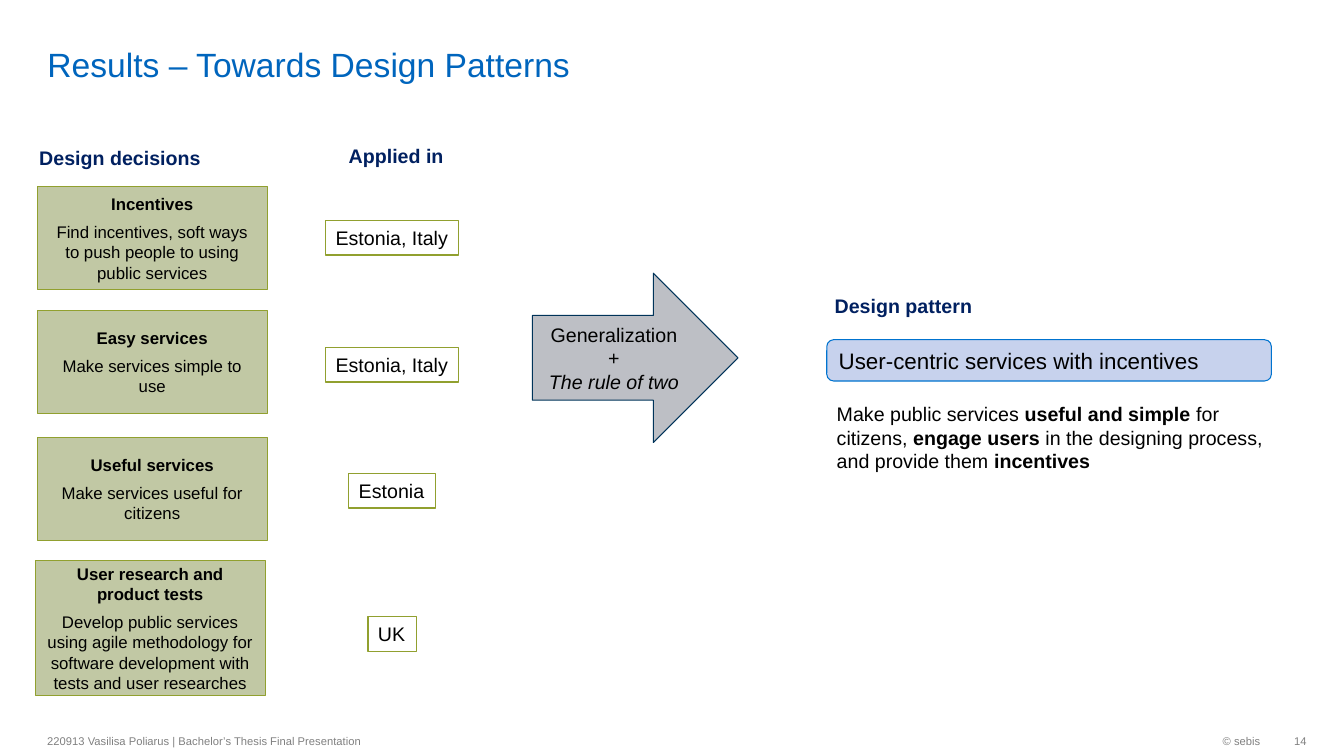
from dataclasses import dataclass

from lxml import etree
from pptx import Presentation
from pptx import util as u
from pptx.dml.color import RGBColor
from pptx.enum import shapes, text
from pptx.oxml.ns import qn

PX = 9144
ALIGN = text.PP_ALIGN
ANCHOR = text.MSO_ANCHOR
SHAPE = shapes.MSO_SHAPE


@dataclass(frozen=True)
class Theme:
    """Colours, type sizes and font of the slide."""
    font: str = "Arial"
    title: str = "0065BD"
    heading: str = "002060"
    ink: str = "000000"
    muted: str = "808080"
    white: str = "FFFFFF"
    olive: str = "91A02F"
    olive_fill: str = "C1C8A4"
    arrow_fill: str = "A2A5AD"
    arrow_line: str = "003359"
    pattern_fill: str = "A2B5E1"
    pattern_line: str = "0073CF"
    title_size: int = 24
    pattern_size: int = 16
    label_size: int = 14
    card_size: int = 12
    footer_size: int = 8


T = Theme()

DECISIONS = [
    ((37, 185, 228, 102), "Incentives",
     "Find incentives, soft ways to push people to using public services"),
    ((37, 308, 228, 102), "Easy services", "Make services simple to use"),
    ((37, 434, 228, 102), "Useful services", "Make services useful for citizens"),
    ((35, 556, 228, 134), "User research and product tests",
     "Develop public services using agile methodology for software "
     "development with tests and user researches"),
]
COUNTRIES = [
    ((323, 219, 132, 34), "Estonia, Italy"),
    ((323, 345, 132, 34), "Estonia, Italy"),
    ((346, 470, 86, 34), "Estonia"),
    ((365, 612, 48, 34), "UK"),
]
HEADINGS = [
    ((29, 140, 181, 34), "Design decisions"),
    ((336, 138, 115, 34), "Applied in"),
    ((818, 287, 157, 34), "Design pattern"),
]
FOOTERS = [
    ((37, 719, 473, 32), ALIGN.LEFT, 10,
     "220913 Vasilisa Poliarus | Bachelor’s Thesis Final Presentation"),
    ((1026, 719, 234, 32), ALIGN.RIGHT, 10, "© sebis"),
    ((1260, 719, 36, 32), ALIGN.RIGHT, 0, "14"),
]
SUMMARY = [
    ("Make public services ", False), ("useful and simple ", True),
    ("for citizens, ", False), ("engage users ", True),
    ("in the designing process, and provide them ", False), ("incentives", True),
]


def emu(box):
    """Turn px lengths into EMU."""
    return [n * PX for n in box]


def add_run(p, words, size=T.label_size, color=T.ink, bold=False, italic=False):
    """Append formatted text to a paragraph."""
    r = p.add_run()
    r.text = words
    r.font.name = T.font
    r.font.size = u.Pt(size)
    r.font.color.rgb = RGBColor.from_string(color)
    r.font.bold = bold
    r.font.italic = italic


def set_frame(sp, anchor=ANCHOR.TOP, wrap=True, align=ALIGN.LEFT):
    """Set up a text frame and return its first paragraph."""
    tf = sp.text_frame
    tf.auto_size = text.MSO_AUTO_SIZE.NONE
    tf.word_wrap = wrap
    tf.vertical_anchor = anchor
    tf.paragraphs[0].alignment = align
    return tf.paragraphs[0]


def add_box(slide, box, **frame):
    """Add a text box and return it with its first paragraph."""
    sp = slide.shapes.add_textbox(*emu(box))
    return sp, set_frame(sp, **frame)


def add_shape(slide, kind, box, fill, line, width=0.75, alpha=None, **frame):
    """Add a filled, outlined shape and return it with its first paragraph."""
    sp = slide.shapes.add_shape(kind, *emu(box))
    sp.shadow.inherit = False
    sp.fill.solid()
    sp.fill.fore_color.rgb = RGBColor.from_string(fill)
    sp.line.color.rgb = RGBColor.from_string(line)
    sp.line.width = u.Pt(width)
    if alpha is not None:
        color = sp._element.spPr.find(qn("a:solidFill"))[0]
        etree.SubElement(color, qn("a:alpha"), val=str(alpha * 1000))
    return sp, set_frame(sp, **frame)


def add_title(slide, box, words):
    """Place and fill the title placeholder."""
    sp = slide.shapes.title
    sp.left, sp.top, sp.width, sp.height = emu(box)
    p = set_frame(sp, anchor=ANCHOR.BOTTOM)
    sp.text_frame.margin_top = sp.text_frame.margin_bottom = 0
    add_run(p, words, size=T.title_size, color=T.title)


def add_decision(slide, box, name, detail):
    """Add a design decision card."""
    sp, p = add_shape(slide, SHAPE.RECTANGLE, box, T.olive_fill, T.olive,
                      anchor=ANCHOR.MIDDLE, align=ALIGN.CENTER)
    p.space_after = u.Pt(6)
    add_run(p, name, size=T.card_size, bold=True)
    p = sp.text_frame.add_paragraph()
    p.alignment = ALIGN.CENTER
    add_run(p, detail, size=T.card_size)


def add_country(slide, box, words):
    """Add a label naming where a decision is applied."""
    _, p = add_shape(slide, SHAPE.RECTANGLE, box, T.white, T.olive,
                     width=0.85, wrap=False)
    add_run(p, words)


def add_heading(slide, box, words):
    """Add a bold column heading."""
    _, p = add_box(slide, box, wrap=False)
    add_run(p, words, color=T.heading, bold=True)


def add_footer(slide, box, align, right, words):
    """Add a small footer text."""
    sp, p = add_box(slide, box, anchor=ANCHOR.MIDDLE, align=align)
    sp.text_frame.margin_right = right * PX
    add_run(p, words, size=T.footer_size, color=T.muted)


def add_arrow(slide, box):
    """Add the generalization arrow."""
    sp, p = add_shape(slide, SHAPE.RIGHT_ARROW, box, T.arrow_fill, T.arrow_line,
                      alpha=70, anchor=ANCHOR.MIDDLE, align=ALIGN.CENTER)
    add_run(p, "Generalization +")
    p = sp.text_frame.add_paragraph()
    p.alignment = ALIGN.CENTER
    add_run(p, "The rule of two", italic=True)


def add_pattern(slide):
    """Add the resulting pattern and its summary."""
    _, p = add_shape(slide, SHAPE.ROUNDED_RECTANGLE, (820, 337, 441, 41),
                     T.pattern_fill, T.pattern_line, alpha=60,
                     anchor=ANCHOR.MIDDLE)
    add_run(p, "User-centric services with incentives", size=T.pattern_size)
    _, p = add_box(slide, (820, 394, 449, 81))
    for words, bold in SUMMARY:
        add_run(p, words, bold=bold)


def main():
    """Build and save the slide."""
    prs = Presentation()
    prs.slide_width, prs.slide_height = emu((1333, 750))
    slide = prs.slides.add_slide(prs.slide_layouts[5])
    add_title(slide, (37, 5, 1099, 79), "Results – Towards Design Patterns")
    for item in DECISIONS:
        add_decision(slide, *item)
    for item in COUNTRIES:
        add_country(slide, *item)
    for item in HEADINGS:
        add_heading(slide, *item)
    add_arrow(slide, (528, 271, 204, 168))
    add_pattern(slide)
    for item in FOOTERS:
        add_footer(slide, *item)
    prs.save("out.pptx")


if __name__ == "__main__":
    main()
